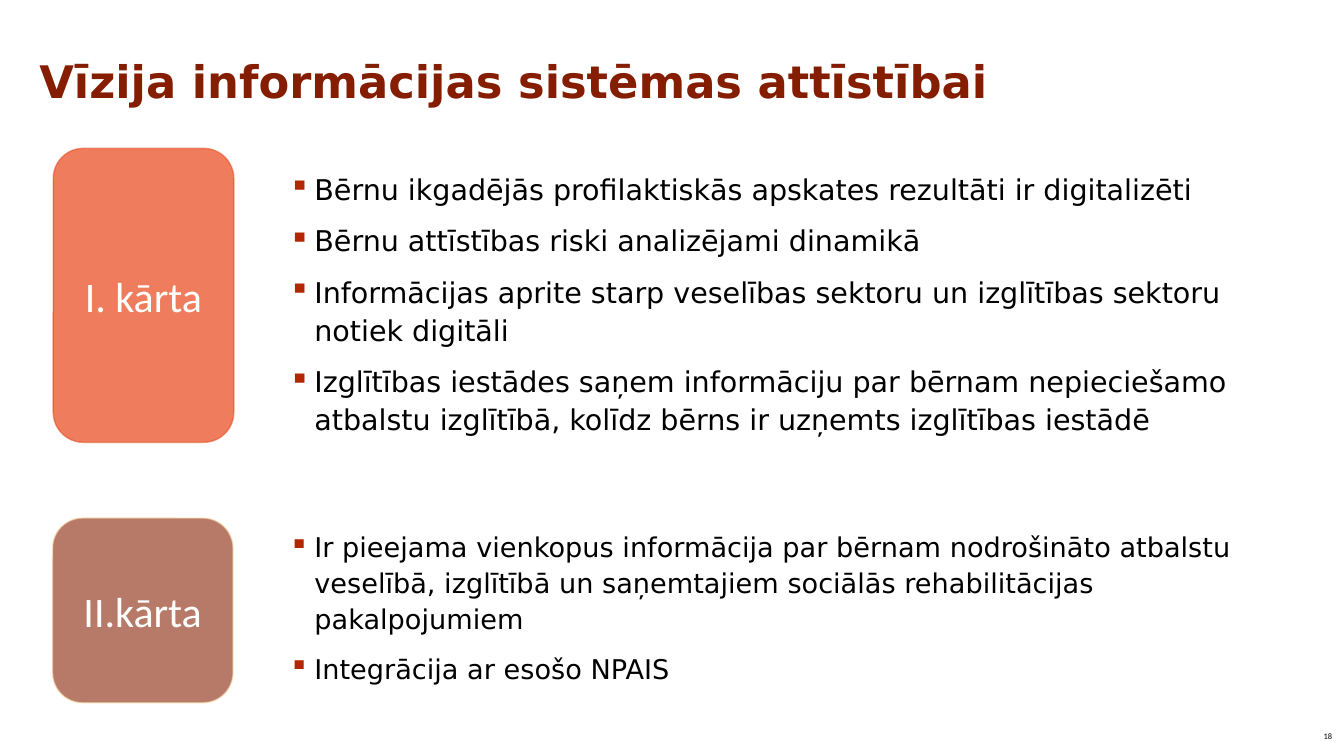
from lxml import etree
from pptx import Presentation
from pptx.dml.color import RGBColor
from pptx.enum.shapes import MSO_SHAPE
from pptx.enum.text import MSO_ANCHOR, PP_ALIGN
from pptx.oxml.ns import qn
from pptx.util import Pt

ROUND = MSO_SHAPE.ROUNDED_RECTANGLE
TOP, MIDDLE = MSO_ANCHOR.TOP, MSO_ANCHOR.MIDDLE
LEFT, CENTER = PP_ALIGN.LEFT, PP_ALIGN.CENTER

MAROON = RGBColor(0x85, 0x1D, 0x00)
ORANGE = RGBColor(0xE8, 0x4C, 0x22)
CREAM = RGBColor(0xFF, 0xE5, 0xB5)
RUST = RGBColor(0xB2, 0x26, 0x00)
BLACK = RGBColor(0x00, 0x00, 0x00)
WHITE = RGBColor(0xFF, 0xFF, 0xFF)

SANS = "DejaVu Sans"
LABEL = "Calibri"
GAP = 10        # space before a point
BREAK = 65      # space before the second stage

# Each stage: text size, points
STAGES = [
    (20.4, ["Bērnu ikgadējās profilaktiskās apskates rezultāti ir digitalizēti",
            "Bērnu attīstības riski analizējami dinamikā",
            "Informācijas aprite starp veselības sektoru un izglītības sektoru "
            "notiek digitāli",
            "Izglītības iestādes saņem informāciju par bērnam nepieciešamo "
            "atbalstu izglītībā, kolīdz bērns ir uzņemts izglītības iestādē"]),
    (19.4, ["Ir pieejama vienkopus informācija par bērnam nodrošināto atbalstu "
            "veselībā, izglītībā un saņemtajiem sociālās rehabilitācijas "
            "pakalpojumiem",
            "Integrācija ar esošo NPAIS"]),
]


def add_run(para, text, size, font, color, bold=False):
    run = para.add_run()
    run.text = text
    run.font.size = Pt(size)
    run.font.name = font
    run.font.color.rgb = color
    run.font.bold = bold


def add_box(slide, left, top, width, height, anchor=TOP):
    box = slide.shapes.add_textbox(Pt(left), Pt(top), Pt(width), Pt(height))
    frame = box.text_frame
    frame.word_wrap = True
    frame.vertical_anchor = anchor
    return frame


def add_line(slide, place, text, size, font, color, bold=False,
             align=LEFT, anchor=TOP, pitch=1.0):
    para = add_box(slide, *place, anchor).paragraphs[0]
    para.alignment = align
    para.line_spacing = pitch
    add_run(para, text, size, font, color, bold)


def set_bullet(para, color, mark):
    props = para._p.get_or_add_pPr()
    props.set("marL", str(Pt(18)))
    props.set("indent", str(-Pt(18)))
    tint = etree.SubElement(props, qn("a:buClr"))
    etree.SubElement(tint, qn("a:srgbClr")).set("val", str(color))
    etree.SubElement(props, qn("a:buChar")).set("char", mark)


def add_points(slide, place, stages):
    frame = add_box(slide, *place)
    para = None
    for size, points in stages:
        for rank, text in enumerate(points):
            first = para is None
            para = frame.paragraphs[0] if first else frame.add_paragraph()
            para.line_spacing = 1.1
            para.space_before = Pt(GAP if first or rank else BREAK)
            set_bullet(para, RUST, "▪")
            add_run(para, text, size, SANS, BLACK)


def set_alpha(fill, percent):
    # Transparency sits on the colour element of a solid fill
    tint = fill._xPr.find(qn("a:solidFill"))[0]
    etree.SubElement(tint, qn("a:alpha")).set("val", str(percent * 1000))


def add_stage(slide, left, top, height, text, color, alpha, edge, fade):
    card = slide.shapes.add_shape(ROUND, Pt(left), Pt(top), Pt(129), Pt(height))
    card.shadow.inherit = False
    card.fill.solid()
    card.fill.fore_color.rgb = color
    set_alpha(card.fill, alpha)
    card.line.width = Pt(1)
    card.line.color.rgb = edge
    set_alpha(card.line.fill, fade)
    frame = card.text_frame
    frame.word_wrap = True
    frame.vertical_anchor = MIDDLE
    para = frame.paragraphs[0]
    para.alignment = CENTER
    add_run(para, text, 30, LABEL, WHITE)


def main():
    deck = Presentation()
    deck.slide_width, deck.slide_height = Pt(960), Pt(540)
    slide = deck.slides.add_slide(deck.slide_layouts[6])

    # Title
    add_line(slide, (21, 39.5, 828, 104), "Vīzija informācijas sistēmas attīstībai",
             32, SANS, MAROON, bold=True, pitch=0.9)

    # Points of both stages
    add_points(slide, (199.5, 116.5, 695, 384), STAGES)

    # Stage cards
    add_stage(slide, 38, 106, 210, "I. kārta", ORANGE, 73, ORANGE, 54)
    add_stage(slide, 37.5, 370, 132, "II.kārta", MAROON, 59, CREAM, 59)

    # Slide number
    add_line(slide, (937, 511, 23, 29), "18", 6, LABEL, BLACK,
             align=CENTER, anchor=MIDDLE)

    deck.save("out.pptx")


if __name__ == "__main__":
    main()
